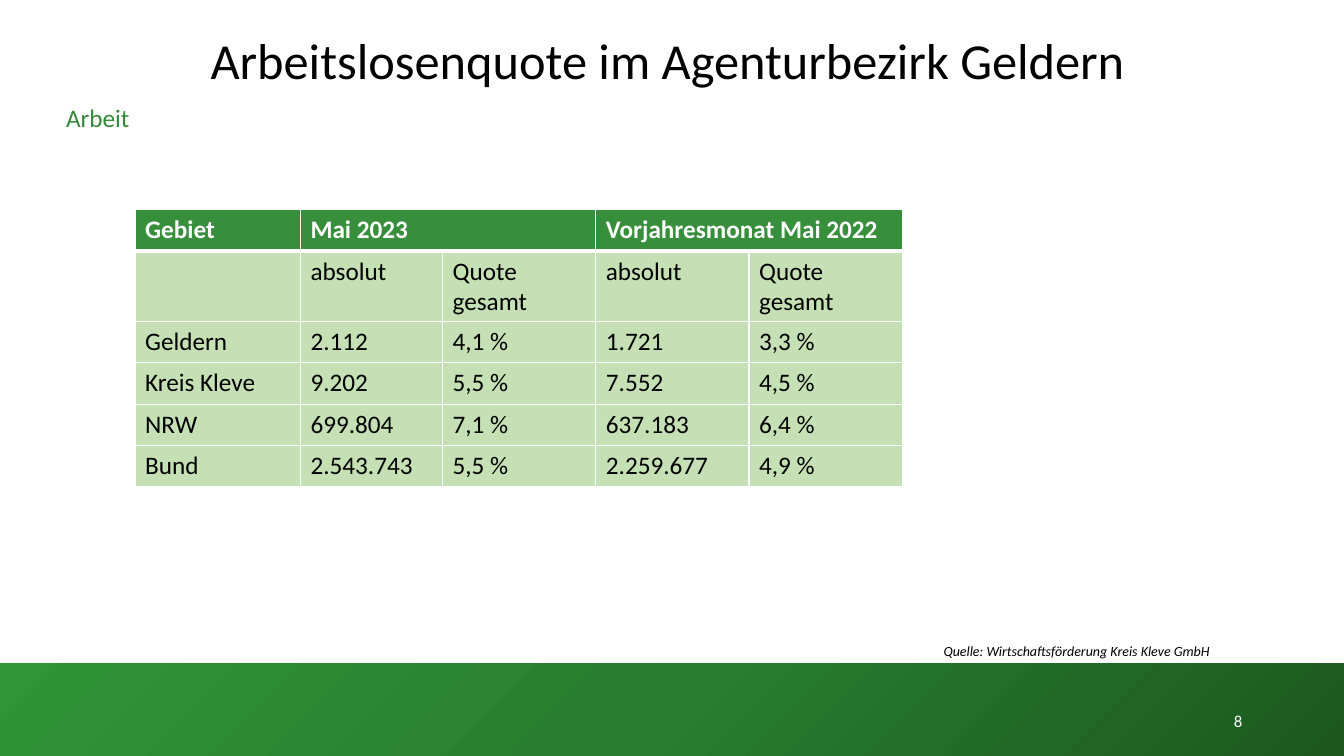
from copy import deepcopy
from dataclasses import dataclass

from lxml.etree import SubElement
from pptx import Presentation
from pptx.dml.color import RGBColor
from pptx.enum.shapes import MSO_SHAPE
from pptx.enum.text import MSO_ANCHOR, PP_ALIGN
from pptx.oxml.ns import qn
from pptx.util import Inches, Pt

FONT = "Calibri"
BLACK = RGBColor(0x00, 0x00, 0x00)
WHITE = RGBColor(0xFF, 0xFF, 0xFF)
LABEL_GREEN = RGBColor(0x34, 0x89, 0x39)
HEADER_GREEN = RGBColor(0x37, 0x8F, 0x3C)
BODY_GREEN = RGBColor(0xC5, 0xE0, 0xB4)
DARK_GREEN = RGBColor(0x1C, 0x58, 0x20)
MID_GREEN = RGBColor(0x28, 0x7D, 0x2E)
BRIGHT_GREEN = RGBColor(0x2F, 0x95, 0x36)

COLUMN_WIDTHS = [1.64, 1.41, 1.52, 1.52, 1.52]
ROW_HEIGHT = 0.41
ROWS = [
    ["Gebiet", "Mai 2023", "", "Vorjahresmonat Mai 2022", ""],
    ["", "absolut", "Quote gesamt", "absolut", "Quote gesamt"],
    ["Geldern", "2.112", "4,1 %", "1.721", "3,3 %"],
    ["Kreis Kleve", "9.202", "5,5 %", "7.552", "4,5 %"],
    ["NRW", "699.804", "7,1 %", "637.183", "6,4 %"],
    ["Bund", "2.543.743", "5,5 %", "2.259.677", "4,9 %"],
]


@dataclass
class Label:
    text: str
    left: float
    top: float
    width: float
    height: float
    size: float
    color: RGBColor = BLACK
    italic: bool = False
    align: PP_ALIGN = PP_ALIGN.LEFT
    anchor: MSO_ANCHOR = MSO_ANCHOR.TOP
    line_spacing: float = 1.0


LABELS = [
    Label("8", 9.42, 6.95, 3, 0.4, 12, WHITE,
          align=PP_ALIGN.RIGHT, anchor=MSO_ANCHOR.MIDDLE),
    Label("Arbeitslosenquote im Agenturbezirk Geldern", 1.99, 0.31, 10.74, 0.87, 36,
          line_spacing=0.9),
    Label("Arbeit", 0.36, 0.97, 1.22, 0.4, 18, LABEL_GREEN, align=PP_ALIGN.CENTER),
    Label("Quelle: Wirtschaftsförderung Kreis Kleve GmbH", 9.26, 6.33, 3.47, 0.27, 10,
          italic=True),
]


def write_text(frame, text: str, *, size: float, color: RGBColor, bold: bool = False,
               italic: bool = False, align: PP_ALIGN = PP_ALIGN.LEFT,
               line_spacing: float = 1.0) -> None:
    para = frame.paragraphs[0]
    para.alignment = align
    para.line_spacing = line_spacing
    para.font.size = Pt(size)
    if not text:
        return
    span = para.add_run()
    span.text = text
    span.font.name = FONT
    span.font.size = Pt(size)
    span.font.bold = bold
    span.font.italic = italic
    span.font.color.rgb = color


def draw_label(page, label: Label) -> None:
    box = page.shapes.add_textbox(Inches(label.left), Inches(label.top),
                                  Inches(label.width), Inches(label.height))
    frame = box.text_frame
    frame.word_wrap = True
    frame.vertical_anchor = label.anchor
    write_text(frame, label.text, size=label.size, color=label.color, italic=label.italic,
               align=label.align, line_spacing=label.line_spacing)


def draw_footer(page) -> None:
    band = page.shapes.add_shape(MSO_SHAPE.RECTANGLE, 0, Inches(6.58),
                                 Inches(13.33), Inches(0.92))
    band.shadow.inherit = False
    band.line.fill.background()
    band.fill.gradient()
    band.fill.gradient_angle = 135
    # The default gradient has two stops; a third goes between them
    stop_list = band._element.spPr.find(qn("a:gradFill")).find(qn("a:gsLst"))
    stop_list.insert(1, deepcopy(stop_list[0]))
    colors = [DARK_GREEN, MID_GREEN, BRIGHT_GREEN]
    for stop, position, color in zip(band.fill.gradient_stops, [0, 0.5, 1], colors):
        stop.position = position
        stop.color.rgb = color


def add_border(cell, side: str, points: float) -> None:
    line = SubElement(cell._tc.get_or_add_tcPr(), qn(f"a:ln{side}"), w=str(Pt(points)))
    fill = SubElement(line, qn("a:solidFill"))
    SubElement(fill, qn("a:srgbClr"), val=str(WHITE))


def draw_table(page) -> None:
    table = page.shapes.add_table(
        len(ROWS), len(COLUMN_WIDTHS), Inches(1.34), Inches(2.08),
        Inches(sum(COLUMN_WIDTHS)), Inches(ROW_HEIGHT * len(ROWS))).table
    for column, width in zip(table.columns, COLUMN_WIDTHS):
        column.width = Inches(width)
    for row_index, texts in enumerate(ROWS):
        header = row_index == 0
        for column_index, text in enumerate(texts):
            cell = table.cell(row_index, column_index)
            write_text(cell.text_frame, text, size=18, bold=header,
                       color=WHITE if header else BLACK)
            # A thick rule parts the header from the body
            for side in "LRTB":
                thick = (row_index, side) in [(0, "B"), (1, "T")]
                add_border(cell, side, 3 if thick else 1)
            cell.fill.solid()
            cell.fill.fore_color.rgb = HEADER_GREEN if header else BODY_GREEN
    # Each period heading spans its two columns
    for first in (1, 3):
        table.cell(0, first).merge(table.cell(0, first + 1))


def main() -> None:
    deck = Presentation()
    deck.slide_width = Inches(13.33)
    deck.slide_height = Inches(7.5)
    page = deck.slides.add_slide(deck.slide_layouts[6])
    draw_footer(page)
    for label in LABELS:
        draw_label(page, label)
    draw_table(page)
    deck.save("out.pptx")


if __name__ == "__main__":
    main()
